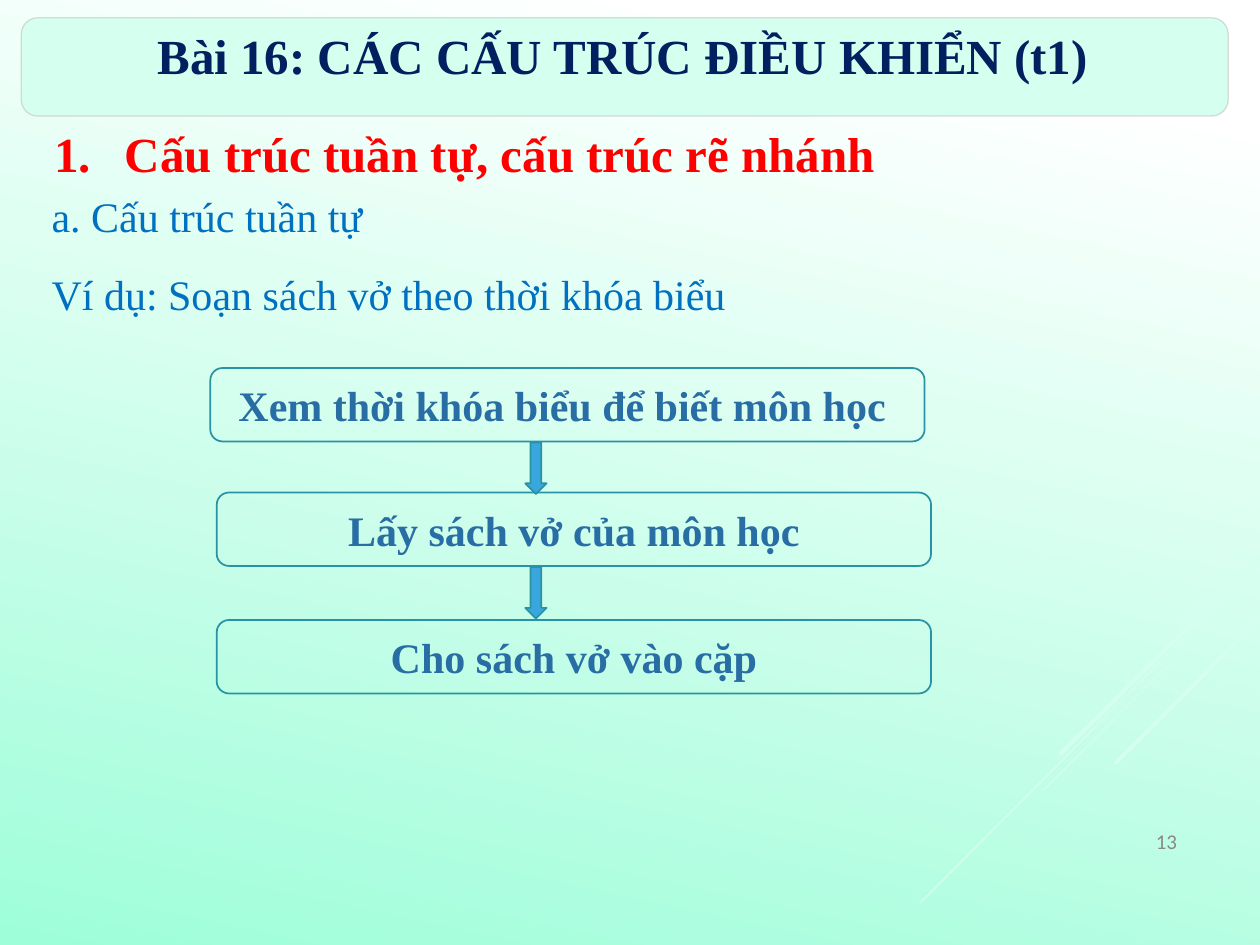
from lxml import etree
from pptx import Presentation
from pptx.dml.color import RGBColor
from pptx.enum.shapes import MSO_CONNECTOR, MSO_SHAPE
from pptx.enum.text import MSO_ANCHOR, PP_ALIGN
from pptx.oxml.ns import qn
from pptx.util import Cm, Pt

ROUNDED = MSO_SHAPE.ROUNDED_RECTANGLE
DOWN_ARROW = MSO_SHAPE.DOWN_ARROW
STRAIGHT = MSO_CONNECTOR.STRAIGHT
LEFT, CENTER, RIGHT = PP_ALIGN.LEFT, PP_ALIGN.CENTER, PP_ALIGN.RIGHT
TOP, MIDDLE, BOTTOM = MSO_ANCHOR.TOP, MSO_ANCHOR.MIDDLE, MSO_ANCHOR.BOTTOM
SERIF = "Times New Roman"
COLORS = {
    "white": "FFFFFF", "mint": "9FFEDA", "pale": "D5FFEF", "navy": "002060",
    "red": "FF0000", "blue": "0070C0", "step": "286DA4", "teal": "2A93A3",
    "arrow": "39A6DD", "edge": "C3C3C3", "number": "898989",
}


def add_shape(kind, left, top, width, height, fill, line, weight):
    shape = page.shapes.add_shape(kind, Cm(left), Cm(top), Cm(width), Cm(height))
    shape.shadow.inherit = False
    if fill:
        shape.fill.solid()
        shape.fill.fore_color.rgb = RGBColor.from_string(COLORS[fill])
    else:
        shape.fill.background()
    shape.line.color.rgb = RGBColor.from_string(COLORS[line])
    shape.line.width = Pt(weight)
    return shape


def write_text(box, text, size, color, bold=False, align=LEFT, anchor=TOP, font=SERIF):
    frame = box.text_frame
    frame.word_wrap = True
    frame.vertical_anchor = anchor
    para = frame.paragraphs[0]
    para.alignment = align
    span = para.add_run()
    span.text = text
    span.font.name = font
    span.font.size = Pt(size)
    span.font.bold = bold
    span.font.color.rgb = RGBColor.from_string(COLORS[color])
    return para


deck = Presentation()
deck.slide_width = Cm(25.4)
deck.slide_height = Cm(19.05)
page = deck.slides.add_slide(deck.slide_layouts[6])

backdrop = page.background.fill
backdrop.gradient()
backdrop.gradient_angle = 258
for stop, position, color in zip(backdrop.gradient_stops, (0.1, 1), ("white", "mint")):
    stop.position = position
    stop.color.rgb = RGBColor.from_string(COLORS[color])

streaks = [
    (25.4, 10.82, 23.29, 12.93, 0.75),
    (25.4, 11.33, 18.54, 18.21, 0.75),
    (25.4, 11.56, 21.03, 15.93, 0.75),
    (25.37, 11.23, 21.36, 15.21, 2.25),
    (25.37, 12.5, 22.48, 15.39, 2.25),
]
for start_x, start_y, end_x, end_y, weight in streaks:
    streak = page.shapes.add_connector(
        STRAIGHT, Cm(start_x), Cm(start_y), Cm(end_x), Cm(end_y))
    streak.line.color.rgb = RGBColor.from_string(COLORS["pale"])
    streak.line.width = Pt(weight)
    etree.SubElement(streak._element.spPr, qn("a:effectLst"))

number_box = page.shapes.add_textbox(Cm(21.59), Cm(15.49), Cm(2.39), Cm(1.85))
write_text(number_box, "13", 12, "number", align=RIGHT, anchor=BOTTOM, font="Calibri")

heading_box = page.shapes.add_textbox(Cm(0.84), Cm(2.36), Cm(17.98), Cm(1.45))
heading = write_text(heading_box, "Cấu trúc tuần tự, cấu trúc rẽ nhánh", 28, "red",
                     bold=True, anchor=MIDDLE)
properties = heading._p.get_or_add_pPr()
properties.set("marL", str(Cm(1.43)))
properties.set("indent", str(-Cm(1.43)))
etree.SubElement(properties, qn("a:buFont"), typeface="+mj-lt")
etree.SubElement(properties, qn("a:buAutoNum"), type="arabicPeriod")

body_lines = [
    (3.71, "a. Cấu trúc tuần tự"),
    (5.28, "Ví dụ: Soạn sách vở theo thời khóa biểu"),
]
for top, text in body_lines:
    box = page.shapes.add_textbox(Cm(0.79), Cm(top), Cm(19.89), Cm(1.3))
    write_text(box, text, 24, "blue")

steps = [
    (4.24, 7.42, "Xem thời khóa biểu để biết môn học "),
    (4.37, 9.93, "Lấy sách vở của môn học"),
    (4.37, 12.5, "Cho sách vở vào cặp"),
]
for left, top, text in steps:
    box = add_shape(ROUNDED, left, top, 14.4, 1.48, None, "teal", 1)
    write_text(box, text, 24, "step", bold=True, align=CENTER, anchor=MIDDLE)

for top in (8.92, 11.43):
    add_shape(DOWN_ARROW, 10.59, top, 0.43, 1.04, "arrow", "teal", 1)

banner = add_shape(ROUNDED, 0.43, 0.36, 24.33, 1.98, "pale", "edge", 0.75)
edge_color = banner.line._ln.find(".//" + qn("a:srgbClr"))
etree.SubElement(edge_color, qn("a:alpha"), val="60000")

title_box = page.shapes.add_textbox(Cm(1.3), Cm(0.38), Cm(22.5), Cm(1.45))
write_text(title_box, "Bài 16: CÁC CẤU TRÚC ĐIỀU KHIỂN (t1)", 28, "navy",
           bold=True, align=CENTER)

deck.save("out.pptx")
